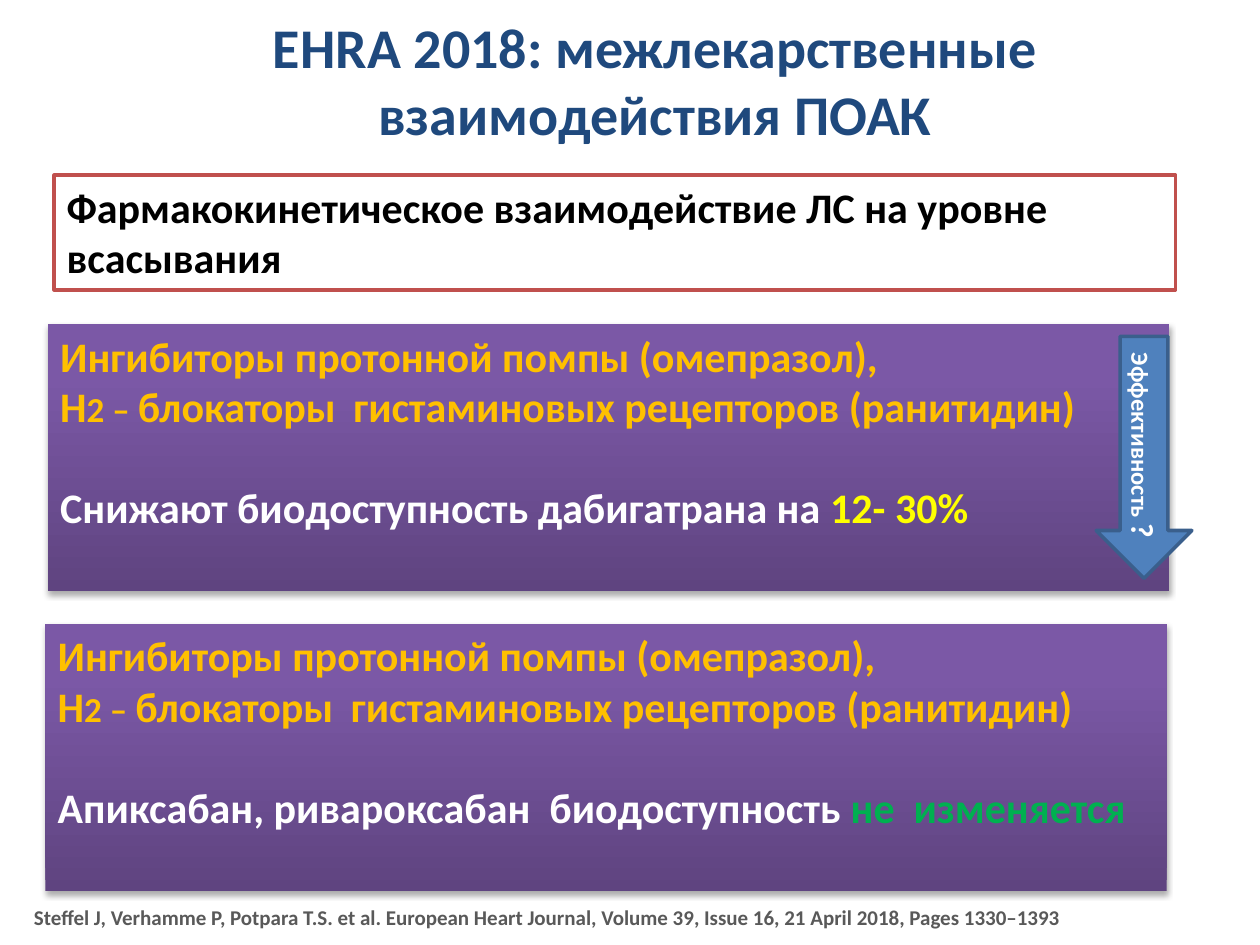
from copy import deepcopy
from pptx import Presentation, util as u
from pptx.dml.color import RGBColor
from pptx.enum import shapes, text
from pptx.oxml import parse_xml
from pptx.oxml.ns import nsdecls, qn

NAVY = RGBColor(0x1F, 0x49, 0x7D)
BLACK = RGBColor(0, 0, 0)
WHITE = RGBColor(0xFF, 0xFF, 0xFF)
RED = RGBColor(0xC0, 0x50, 0x4D)
GREY = RGBColor(0x59, 0x59, 0x59)
GOLD = RGBColor(0xFF, 0xC0, 0x00)
YELLOW = RGBColor(0xFF, 0xFF, 0x00)
GREEN = RGBColor(0x00, 0xB0, 0x50)
BLUE = RGBColor(0x4F, 0x81, 0xBD)
DARK_BLUE = RGBColor(0x3A, 0x5F, 0x8C)
PURPLES = [(0, RGBColor(0x5F, 0x44, 0x80)), (0.8, RGBColor(0x7B, 0x58, 0xA6)),
           (1, RGBColor(0x7C, 0x57, 0xA8))]

# Content: paragraphs are lists of runs (text, size, colour)
TITLE = [[("EHRA 2018: межлекарственные взаимодействия ПОАК", 32, NAVY)]]
HEADING = [[("Фармакокинетическое взаимодействие ЛС на уровне ", 24, BLACK)],
           [("всасывания", 24, BLACK)]]
SOURCE = [[("Steffel J, Verhamme P, Potpara T.S. et al. European Heart Journal, "
            "Volume 39, Issue 16, 21 April 2018, Pages 1330–1393", 12, GREY)]]
DRUGS = [[("Ингибиторы протонной помпы (омепразол),", 24, GOLD)],
         [("Н", 24, GOLD), ("2 – ", 20, GOLD), ("блокаторы", 24, GOLD),
          (" ", 20, GOLD), (" гистаминовых рецепторов (ранитидин)", 24, GOLD)]]
PANELS = [
    (0.38, 2.57, [("Снижают биодоступность дабигатрана на ", 24, WHITE),
                  ("12- 30%", 24, YELLOW)]),
    (0.36, 4.95, [("Апиксабан, ривароксабан  биодоступность ", 24, WHITE),
                  ("не  изменяется", 24, GREEN)]),
]
EFFECT = [[("Эффективность ", 14, WHITE), ("?", 18, WHITE)]]


def write(sp, paragraphs, align, anchor):
    tf = sp.text_frame
    tf.word_wrap = True
    tf.auto_size = text.MSO_AUTO_SIZE.NONE
    tf.vertical_anchor = anchor
    for i, runs in enumerate(paragraphs):
        p = tf.paragraphs[0] if i == 0 else tf.add_paragraph()
        p.alignment = align
        for words, size, color in runs:
            r = p.add_run()
            r.text = words
            r.font.name = "Calibri"
            r.font.size = u.Pt(size)
            r.font.bold = True
            r.font.color.rgb = color
    return tf


def add_shape(s, kind, box, fill=None, line=None):
    sp = s.shapes.add_shape(kind, *map(u.Inches, box))
    sp.shadow.inherit = False
    if fill is not None:
        sp.fill.solid()
        sp.fill.fore_color.rgb = fill
    if line is None:
        sp.line.fill.background()
    else:
        sp.line.color.rgb = line
        sp.line.width = u.Pt(2)
    return sp


def add_panel(s, box):
    sp = add_shape(s, shapes.MSO_SHAPE.RECTANGLE, box)
    sp.fill.gradient()
    sp.fill.gradient_angle = 90
    stops = sp._element.spPr.find(qn("a:gradFill")).find(qn("a:gsLst"))
    stops.append(deepcopy(stops[0]))
    for stop, (position, color) in zip(sp.fill.gradient_stops, PURPLES):
        stop.position = position
        stop.color.rgb = color
    # Soft shadow below the panel
    sp._element.spPr.find(qn("a:effectLst")).append(parse_xml(
        f'<a:outerShdw {nsdecls("a")} blurRad="{u.Pt(3.5)}" dist="{u.Pt(2.2)}" '
        'dir="5400000" rotWithShape="0"><a:srgbClr val="000000">'
        '<a:alpha val="32000"/></a:srgbClr></a:outerShdw>'))
    return sp


def main():
    left, center = text.PP_ALIGN.LEFT, text.PP_ALIGN.CENTER
    top, middle = text.MSO_ANCHOR.TOP, text.MSO_ANCHOR.MIDDLE
    prs = Presentation()
    prs.slide_width, prs.slide_height = u.Inches(10), u.Inches(7.5)
    s = prs.slides.add_slide(prs.slide_layouts[5])

    # Title
    title = s.shapes.title
    title.left, title.top, title.width, title.height = map(
        u.Inches, (0.67, 0.16, 9.06, 0.94))
    write(title, TITLE, center, middle)

    # Heading box
    sp = add_shape(s, shapes.MSO_SHAPE.RECTANGLE, (0.43, 1.39, 8.9, 0.91), WHITE, RED)
    write(sp, HEADING, text.PP_ALIGN.JUSTIFY, top)

    # Source line
    sp = s.shapes.add_textbox(*map(u.Inches, (0.27, 7.18, 9.53, 0.2)))
    tf = write(sp, SOURCE, left, text.MSO_ANCHOR.BOTTOM)
    tf.margin_left = tf.margin_right = tf.margin_top = tf.margin_bottom = 0

    # Drug panels, with a one-line gap before the conclusion
    for x, y, conclusion in PANELS:
        sp = add_panel(s, (x, y, 8.9, 2.12))
        tf = write(sp, DRUGS + [conclusion], left, top)
        tf.paragraphs[-1].space_before = u.Pt(29)

    # Effect arrow
    sp = add_shape(s, shapes.MSO_SHAPE.DOWN_ARROW, (8.7, 2.67, 0.76, 1.92),
                   BLUE, DARK_BLUE)
    tf = write(sp, EFFECT, center, middle)
    tf._txBody.bodyPr.set("vert", "vert")

    prs.save("out.pptx")


if __name__ == "__main__":
    main()
